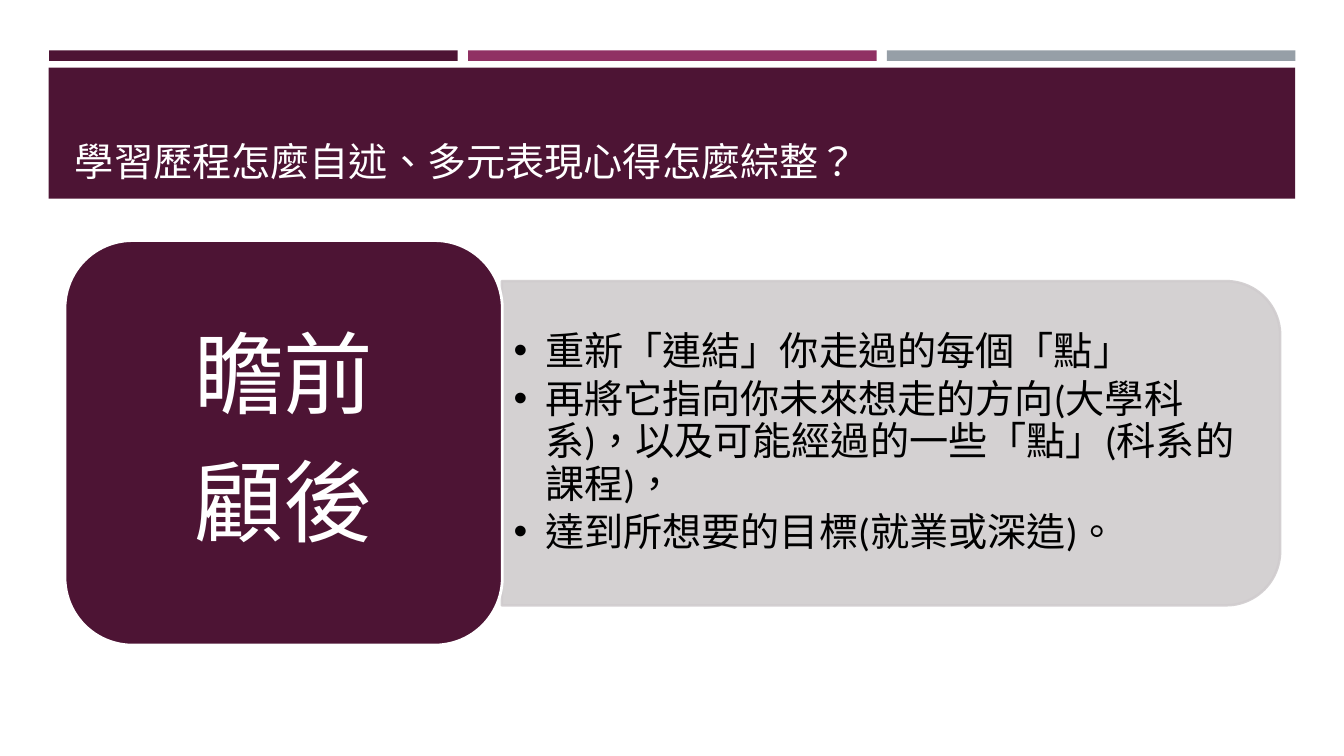
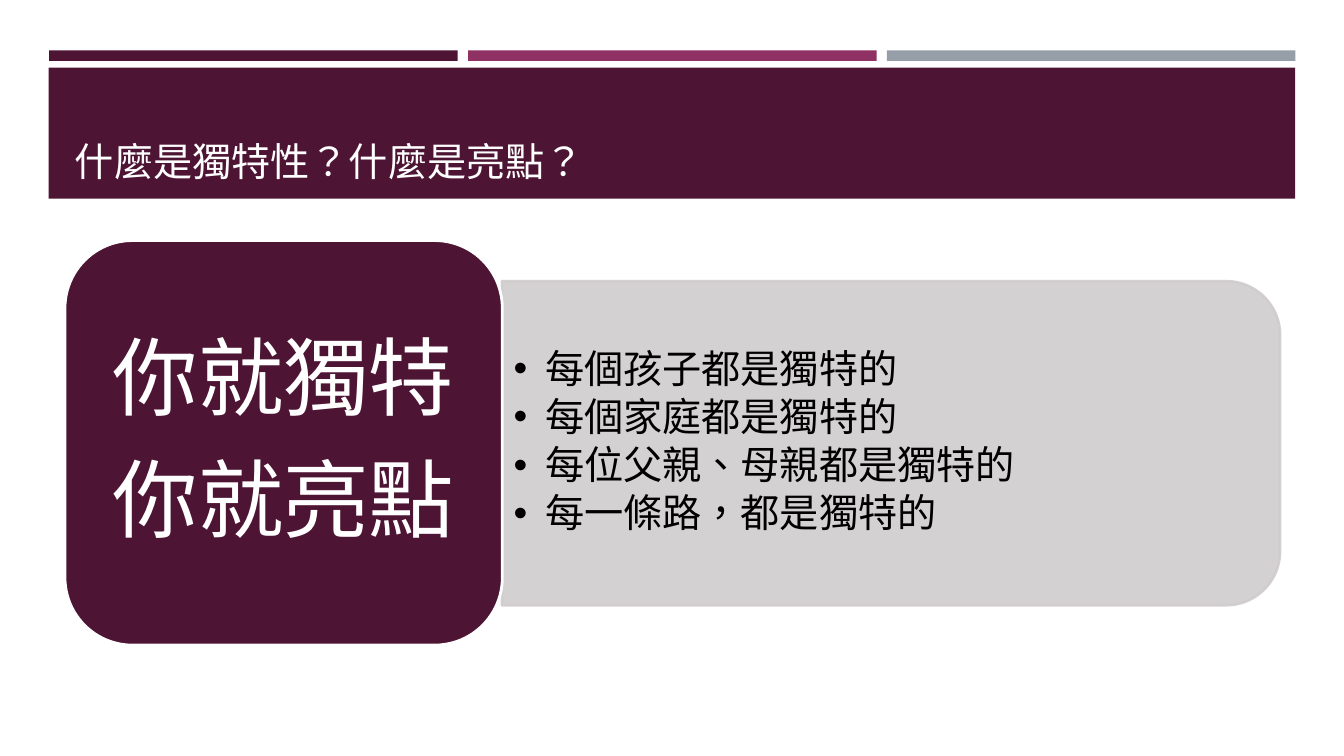
from dataclasses import dataclass
from typing import Any

from lxml.etree import SubElement
from pptx import Presentation
from pptx.dml.color import RGBColor
from pptx.enum.shapes import MSO_SHAPE
from pptx.enum.text import MSO_ANCHOR, PP_ALIGN
from pptx.oxml.ns import qn
from pptx.util import Pt


@dataclass(frozen=True)
class Theme:
    font: str = "Calibri"
    language: str = "zh-TW"
    plum: str = "4D1434"
    magenta: str = "903163"
    slate: str = "969FA7"
    panel: str = "D0CCCE"
    panel_opacity: int = 90
    white: str = "FFFFFF"
    black: str = "000000"
    title_size: float = 28
    bullet_size: float = 28


@dataclass(frozen=True)
class Frame:
    left: float
    top: float
    width: float
    height: float

    def lengths(self) -> tuple[Pt, Pt, Pt, Pt]:
        return Pt(self.left), Pt(self.top), Pt(self.width), Pt(self.height)

    def turned(self) -> "Frame":
        """Return the frame that covers this one after a quarter turn."""
        shift = (self.width - self.height) / 2
        return Frame(self.left + shift, self.top - shift, self.height, self.width)


@dataclass(frozen=True)
class Topic:
    title: str
    headline: tuple[str, ...]
    headline_size: float
    bullets: tuple[str, ...]


THEME = Theme()
PAGE_WIDTH, PAGE_HEIGHT = 960, 540
STRIPE = Frame(35.2, 36, 291.8, 7.6)
STRIPE_GAP = 7.4
BANNER = Frame(34.8, 48.4, 890.4, 93.6)
TITLE = Frame(46.4, 55.4, 868, 80)
CARD = Frame(46.4, 171.8, 312.4, 289)
PANEL = Frame(358.4, 200.8, 556, 231.6)
PANEL_TEXT = Frame(358.4, 212, 544.4, 208.8)
BULLET_INDENT = 22.5

TOPICS = (
    Topic(
        "學習歷程怎麼自述、多元表現心得怎麼綜整？",
        ("瞻前", "顧後"),
        64,
        (
            "重新「連結」你走過的每個「點」",
            "再將它指向你未來想走的方向(大學科系)，以及可能經過的一些「點」(科系的課程)，",
            "達到所想要的目標(就業或深造)。",
        ),
    ),
    Topic(
        "什麼是獨特性？什麼是亮點？",
        ("你就獨特", "你就亮點"),
        61,
        (
            "每個孩子都是獨特的",
            "每個家庭都是獨特的",
            "每位父親、母親都是獨特的",
            "每一條路，都是獨特的",
        ),
    ),
)


def add_box(page: Any, kind: MSO_SHAPE, frame: Frame, color: str,
            line: str | None = None, line_width: float = 0) -> Any:
    box = page.shapes.add_shape(kind, *frame.lengths())
    box.shadow.inherit = False
    box.fill.solid()
    box.fill.fore_color.rgb = RGBColor.from_string(color)
    if line:
        box.line.color.rgb = RGBColor.from_string(line)
        box.line.width = Pt(line_width)
    else:
        box.line.fill.background()
    return box


def set_opacity(box: Any, percent: int) -> None:
    """Apply one opacity to both fill and outline."""
    for color in box._element.spPr.iter(qn("a:srgbClr")):
        SubElement(color, qn("a:alpha"), val=str(percent * 1000))


def add_bullet(para: Any, indent: float) -> None:
    properties = para._p.get_or_add_pPr()
    properties.set("marL", str(Pt(indent)))
    properties.set("indent", str(-Pt(indent)))
    SubElement(properties, qn("a:buFont"), typeface="Arial")
    SubElement(properties, qn("a:buChar"), char="•")


def write_text(box: Any, lines: tuple[str, ...], *, size: float, color: str,
               anchor: MSO_ANCHOR, align: PP_ALIGN = PP_ALIGN.LEFT,
               insets: tuple[float, float] = (7.2, 3.6), line_spacing: float = 1,
               space_after: float = 0, bulleted: bool = False) -> None:
    """Fill a box; insets are (horizontal, vertical), space_after is a share of size."""
    frame = box.text_frame
    frame.word_wrap = True
    frame.vertical_anchor = anchor
    frame.margin_left = frame.margin_right = Pt(insets[0])
    frame.margin_top = frame.margin_bottom = Pt(insets[1])
    for index, line in enumerate(lines):
        para = frame.add_paragraph() if index else frame.paragraphs[0]
        para.alignment = align
        para.line_spacing = line_spacing
        para.space_after = Pt(size * space_after)
        if bulleted:
            add_bullet(para, BULLET_INDENT)
        span = para.add_run()
        span.text = line
        span.font.size = Pt(size)
        span.font.name = THEME.font
        span.font.color.rgb = RGBColor.from_string(color)
        properties = span._r.get_or_add_rPr()
        properties.set("lang", THEME.language)
        SubElement(properties, qn("a:ea"), typeface=THEME.font)


def add_header(page: Any, title: str) -> None:
    for index, color in enumerate((THEME.plum, THEME.magenta, THEME.slate)):
        left = STRIPE.left + index * (STRIPE.width + STRIPE_GAP)
        stripe = Frame(left, STRIPE.top, STRIPE.width, STRIPE.height)
        add_box(page, MSO_SHAPE.RECTANGLE, stripe, color)
    add_box(page, MSO_SHAPE.RECTANGLE, BANNER, THEME.plum)
    write_text(page.shapes.add_textbox(*TITLE.lengths()), (title,),
               size=THEME.title_size, color=THEME.white, anchor=MSO_ANCHOR.BOTTOM)


def add_panel(page: Any, bullets: tuple[str, ...]) -> None:
    panel = add_box(page, MSO_SHAPE.ROUND_2_SAME_RECTANGLE, PANEL.turned(),
                    THEME.panel, THEME.panel, 1.75)
    panel.rotation = 90
    set_opacity(panel, THEME.panel_opacity)
    write_text(page.shapes.add_textbox(*PANEL_TEXT.lengths()), bullets,
               size=THEME.bullet_size, color=THEME.black, anchor=MSO_ANCHOR.MIDDLE,
               insets=(8.4, 4.2), line_spacing=0.9, space_after=0.15, bulleted=True)


def add_card(page: Any, headline: tuple[str, ...], size: float) -> None:
    card = add_box(page, MSO_SHAPE.ROUNDED_RECTANGLE, CARD, THEME.plum, THEME.white, 2)
    write_text(card, headline, size=size, color=THEME.white, anchor=MSO_ANCHOR.MIDDLE,
               align=PP_ALIGN.CENTER, insets=(18, 9.4), line_spacing=0.9,
               space_after=0.35)


def main() -> None:
    deck = Presentation()
    deck.slide_width, deck.slide_height = Pt(PAGE_WIDTH), Pt(PAGE_HEIGHT)
    for topic in TOPICS:
        page = deck.slides.add_slide(deck.slide_layouts[6])
        add_header(page, topic.title)
        add_panel(page, topic.bullets)
        add_card(page, topic.headline, topic.headline_size)
    deck.save("out.pptx")


if __name__ == "__main__":
    main()
